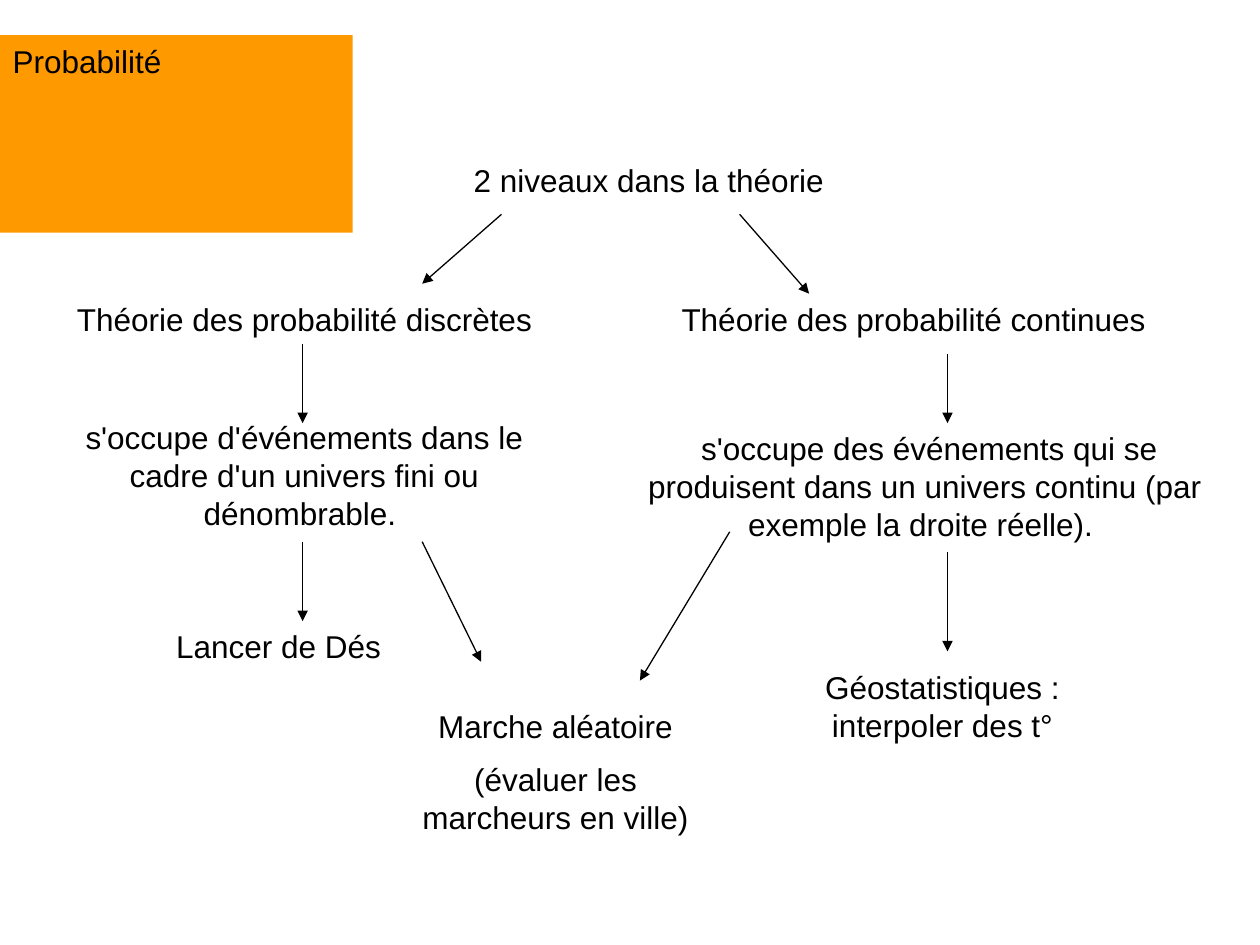
from dataclasses import dataclass

from lxml import etree
from pptx import Presentation
from pptx.dml.color import RGBColor
from pptx.enum.shapes import MSO_CONNECTOR
from pptx.enum.text import MSO_ANCHOR, MSO_AUTO_SIZE, PP_ALIGN
from pptx.oxml.ns import qn
from pptx.util import Cm, Pt

LEFT, CENTER = PP_ALIGN.LEFT, PP_ALIGN.CENTER
TOP, MIDDLE = MSO_ANCHOR.TOP, MSO_ANCHOR.MIDDLE
FIT_SHAPE = MSO_AUTO_SIZE.SHAPE_TO_FIT_TEXT
STRAIGHT = MSO_CONNECTOR.STRAIGHT


@dataclass(frozen=True)
class Theme:
    font: str = "Arial"
    size: Pt = Pt(18)
    paragraph_gap: Pt = Pt(9)
    line_width: Pt = Pt(0.75)
    ink: RGBColor = RGBColor(0x00, 0x00, 0x00)
    banner: RGBColor = RGBColor(0xFF, 0x99, 0x00)


theme = Theme()


def write_text(shape, paragraphs, align, anchor):
    frame = shape.text_frame
    frame.text = "\n".join(paragraphs)
    frame.word_wrap = True
    frame.auto_size = FIT_SHAPE
    frame.vertical_anchor = anchor
    for index, paragraph in enumerate(frame.paragraphs):
        paragraph.alignment = align
        paragraph.space_before = theme.paragraph_gap if index else Pt(0)
        paragraph.font.name = theme.font
        paragraph.font.size = theme.size
        paragraph.font.color.rgb = theme.ink


def add_arrow(slide, start, end):
    arrow = slide.shapes.add_connector(
        STRAIGHT, *(Cm(value) for value in (*start, *end)))
    arrow.line.color.rgb = theme.ink
    arrow.line.width = theme.line_width
    properties = arrow._element.spPr
    etree.SubElement(properties.find(qn("a:ln")), qn("a:tailEnd"), type="triangle")
    etree.SubElement(properties, qn("a:effectLst"))


presentation = Presentation()
presentation.slide_width = Cm(25.4)
presentation.slide_height = Cm(19.05)
slide = presentation.slides.add_slide(presentation.slide_layouts[5])

# Title banner
title = slide.shapes.title
title.left, title.top, title.width, title.height = Cm(0), Cm(0.71), Cm(7.11), Cm(1.02)
title.fill.solid()
title.fill.fore_color.rgb = theme.banner
write_text(title, ["Probabilité"], LEFT, TOP)

# Levels, definitions and examples: left, top, width, height in centimetres
notions = [
    (9.3, 3.12, 8.99, 1.02, LEFT, TOP, ["2 niveaux dans la théorie"]),
    (1.3, 5.92, 10.01, 1.02, LEFT, TOP, ["Théorie des probabilité discrètes"]),
    (13.49, 5.92, 10.01, 1.02, LEFT, TOP, ["Théorie des probabilité continues"]),
    (0.89, 8.31, 10.49, 2.54, CENTER, MIDDLE,
     ["s'occupe d'événements dans le cadre d'un univers fini ou dénombrable. "]),
    (12.5, 8.53, 12.29, 2.54, CENTER, MIDDLE,
     [" s'occupe des événements qui se produisent dans un univers continu "
      "(par exemple la droite réelle). "]),
    (3.3, 12.52, 5.21, 1.02, LEFT, TOP, ["Lancer de Dés"]),
    (8.1, 14.12, 6.2, 2.95, CENTER, TOP,
     ["Marche aléatoire", "(évaluer les marcheurs en ville)"]),
    (15.7, 13.34, 6.6, 1.78, CENTER, TOP, ["Géostatistiques : interpoler des t°"]),
]
for left, top, width, height, align, anchor, paragraphs in notions:
    notion = slide.shapes.add_textbox(Cm(left), Cm(top), Cm(width), Cm(height))
    write_text(notion, paragraphs, align, anchor)

# Arrows down the discrete and continuous branches
discrete_x, continuous_x = 6.1, 19.1
links = [
    ((10.11, 4.32), (8.51, 5.72)),
    ((14.91, 4.32), (16.31, 5.92)),
    ((discrete_x, 6.93), (discrete_x, 8.53)),
    ((continuous_x, 7.14), (continuous_x, 8.53)),
    ((discrete_x, 10.92), (discrete_x, 12.52)),
    ((8.51, 10.92), (9.7, 13.34)),
    ((14.71, 10.72), (12.9, 13.72)),
    ((continuous_x, 11.13), (continuous_x, 13.13)),
]
for start, end in links:
    add_arrow(slide, start, end)

presentation.save("out.pptx")
